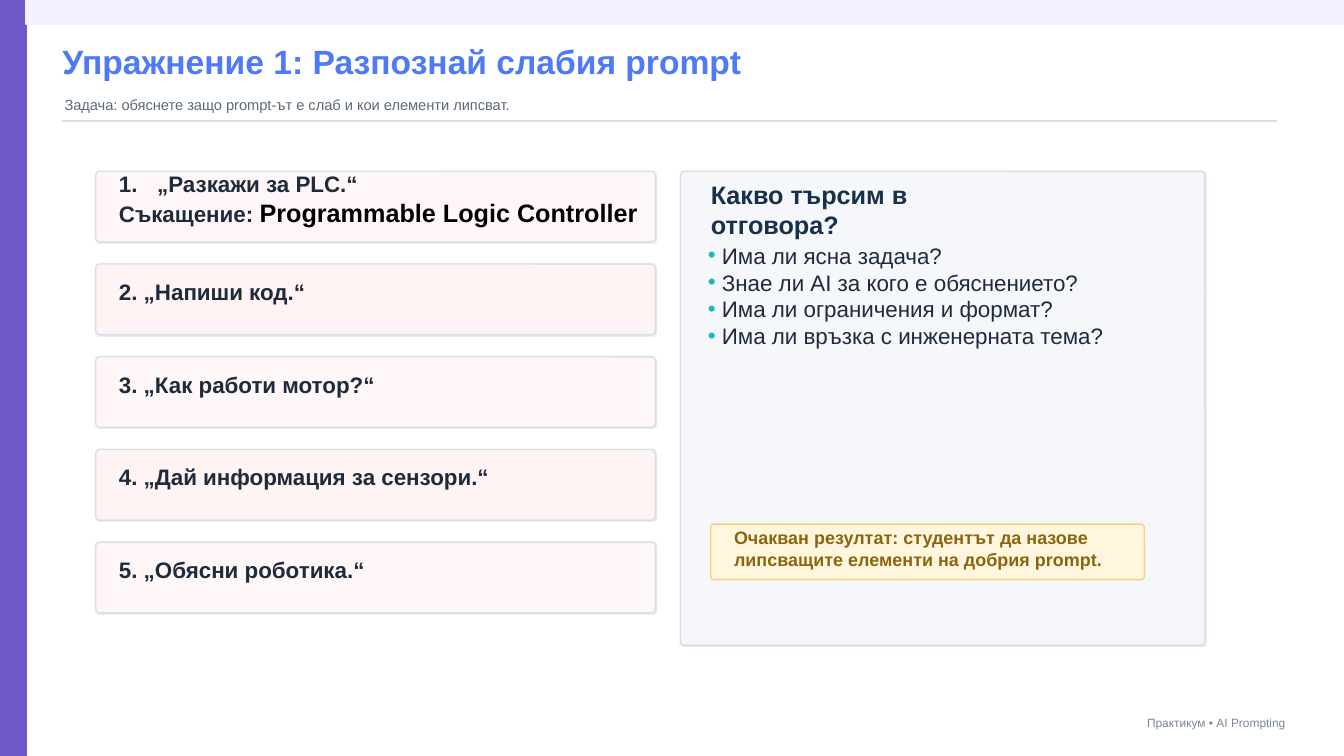
from dataclasses import dataclass

from lxml import etree
from pptx import Presentation
from pptx import util as u
from pptx.dml.color import RGBColor
from pptx.enum import shapes, text
from pptx.oxml.ns import qn


@dataclass(frozen=True)
class Theme:
    font: str = "Arial"
    purple: str = "6E58C6"
    lilac: str = "F4F0FF"
    title: str = "4E79F7"
    subtitle: str = "5C6B7A"
    footer: str = "7A8796"
    border: str = "D9DFEA"
    ink: str = "1E2B3C"
    black: str = "000000"
    heading: str = "18304A"
    teal: str = "18B6C2"
    card_fills: tuple = ("FFF7F7", "FFF4F4")
    panel: str = "F6F7FB"
    result_fill: str = "FFF6DD"
    result_border: str = "F2D37A"
    result_ink: str = "8A6510"
    title_size: float = 24
    heading_size: float = 18
    body_size: float = 16
    result_size: float = 12.8
    subtitle_size: float = 10.5
    footer_size: float = 8.5


def add_xml(parent, tag, **attributes):
    return etree.SubElement(parent, qn(tag), attributes)


class SlideBuilder:
    def __init__(self, slide, theme):
        self.slide = slide
        self.theme = theme

    def box(self, left, top, width, height, fill, border, radius=None, shadow=False):
        kind = shapes.MSO_SHAPE.RECTANGLE if radius is None else shapes.MSO_SHAPE.ROUNDED_RECTANGLE
        box = self.slide.shapes.add_shape(kind, *map(u.Inches, (left, top, width, height)))
        if radius is not None:
            box.adjustments[0] = radius / min(width, height)
        box.fill.solid()
        box.fill.fore_color.rgb = RGBColor.from_string(fill)
        box.line.color.rgb = RGBColor.from_string(border)
        box.line.width = u.Pt(1)
        box.shadow.inherit = False
        if shadow:
            effects = box.element.spPr.find(qn("a:effectLst"))
            outer = add_xml(effects, "a:outerShdw", blurRad=str(u.Pt(0.5)), dist=str(u.Pt(0.2)),
                            dir="2700000", algn="bl", rotWithShape="0")
            add_xml(add_xml(outer, "a:srgbClr", val=self.theme.black), "a:alpha", val="10000")

    def rule(self, left, top, right, color, width):
        rule = self.slide.shapes.add_connector(
            shapes.MSO_CONNECTOR.STRAIGHT, *map(u.Inches, (left, top, right, top)))
        rule.line.color.rgb = RGBColor.from_string(color)
        rule.line.width = u.Pt(width)
        add_xml(rule.element.spPr, "a:effectLst")

    def text(self, content, left, top, width, height, size, color, bold=False,
             align=None, anchor=text.MSO_ANCHOR.MIDDLE):
        frame = self.slide.shapes.add_textbox(*map(u.Inches, (left, top, width, height))).text_frame
        frame.word_wrap = True
        frame.vertical_anchor = anchor
        frame.margin_left = frame.margin_top = frame.margin_right = frame.margin_bottom = 0
        for index, words in enumerate([content] if isinstance(content, str) else content):
            paragraph = frame.add_paragraph() if index else frame.paragraphs[0]
            paragraph.alignment = align
            for part in [(words, {})] if isinstance(words, str) else words:
                wording, changes = part
                run = paragraph.add_run()
                run.text = wording
                run.font.name = self.theme.font
                run.font.size = u.Pt(changes.get("size", size))
                run.font.bold = bold
                run.font.color.rgb = RGBColor.from_string(changes.get("color", color))
        return frame.paragraphs

    def hang(self, paragraph, indent):
        properties = paragraph._p.get_or_add_pPr()
        properties.set("marL", str(u.Inches(indent)))
        properties.set("indent", str(-u.Inches(indent)))
        return properties

    def number(self, paragraph, indent):
        add_xml(self.hang(paragraph, indent), "a:buAutoNum", type="arabicPeriod")

    def bullet(self, paragraph, indent, color):
        properties = self.hang(paragraph, indent)
        add_xml(add_xml(properties, "a:buClr"), "a:srgbClr", val=color)
        add_xml(properties, "a:buFont", typeface=self.theme.font)
        add_xml(properties, "a:buChar", char="•")


def main():
    theme = Theme()
    deck = Presentation()
    deck.slide_width, deck.slide_height = u.Inches(13.33), u.Inches(7.5)
    page = SlideBuilder(deck.slides.add_slide(deck.slide_layouts[6]), theme)

    page.box(0, 0, 0.26, 7.5, theme.purple, theme.purple)
    page.box(0.26, 0, 13.07, 0.24, theme.lilac, theme.lilac)
    page.text("Упражнение 1: Разпознай слабия prompt", 0.62, 0.38, 9.3, 0.46,
              size=theme.title_size, color=theme.title, bold=True)
    page.text("Задача: обяснете защо prompt-ът е слаб и кои елементи липсват.", 0.64, 0.93, 11, 0.22,
              size=theme.subtitle_size, color=theme.subtitle)
    page.rule(0.62, 1.2, 12.67, theme.border, 1.2)
    page.text("Практикум • AI Prompting", 10.25, 7.08, 2.5, 0.18,
              size=theme.footer_size, color=theme.footer, align=text.PP_ALIGN.RIGHT)

    abbreviation = [
        ("Съкащение: ", {}),
        ("Programmable Logic Controller", {"size": theme.heading_size, "color": theme.black}),
    ]
    weak_prompts = [
        ["„Разкажи за PLC.“", abbreviation],
        "2. „Напиши код.“",
        "3. „Как работи мотор?“",
        "4. „Дай информация за сензори.“",
        "5. „Обясни роботика.“",
    ]
    for index, prompt in enumerate(weak_prompts):
        top = 1.7 + 0.92 * index
        page.box(0.95, top, 5.55, 0.7, theme.card_fills[index % 2], theme.border,
                 radius=0.04, shadow=True)
        lines = page.text(prompt, 1.18, top + 0.18, 4.95 if index else 5.2, 0.18,
                          size=theme.body_size, color=theme.ink, bold=True)
        if index == 0:
            page.number(lines[0], 0.38)

    page.box(6.75, 1.7, 5.2, 4.7, theme.panel, theme.border, radius=0.04, shadow=True)
    page.text("Какво търсим в отговора?", 7.05, 1.98, 2.9, 0.2,
              size=theme.heading_size, color=theme.heading, bold=True)
    questions = page.text(
        [
            "Има ли ясна задача?",
            "Знае ли AI за кого е обяснението?",
            "Има ли ограничения и формат?",
            "Има ли връзка с инженерната тема?",
        ],
        7.02, 2.4, 4.2, 2.1, size=theme.body_size, color=theme.ink, anchor=text.MSO_ANCHOR.TOP)
    for question in questions:
        page.bullet(question, 0.14, theme.teal)

    page.box(7.05, 5.2, 4.3, 0.55, theme.result_fill, theme.result_border, radius=0.03)
    page.text("Очакван резултат: студентът да назове липсващите елементи на добрия prompt.",
              7.28, 5.36, 3.95, 0.16, size=theme.result_size, color=theme.result_ink, bold=True)

    deck.save("out.pptx")


if __name__ == "__main__":
    main()
